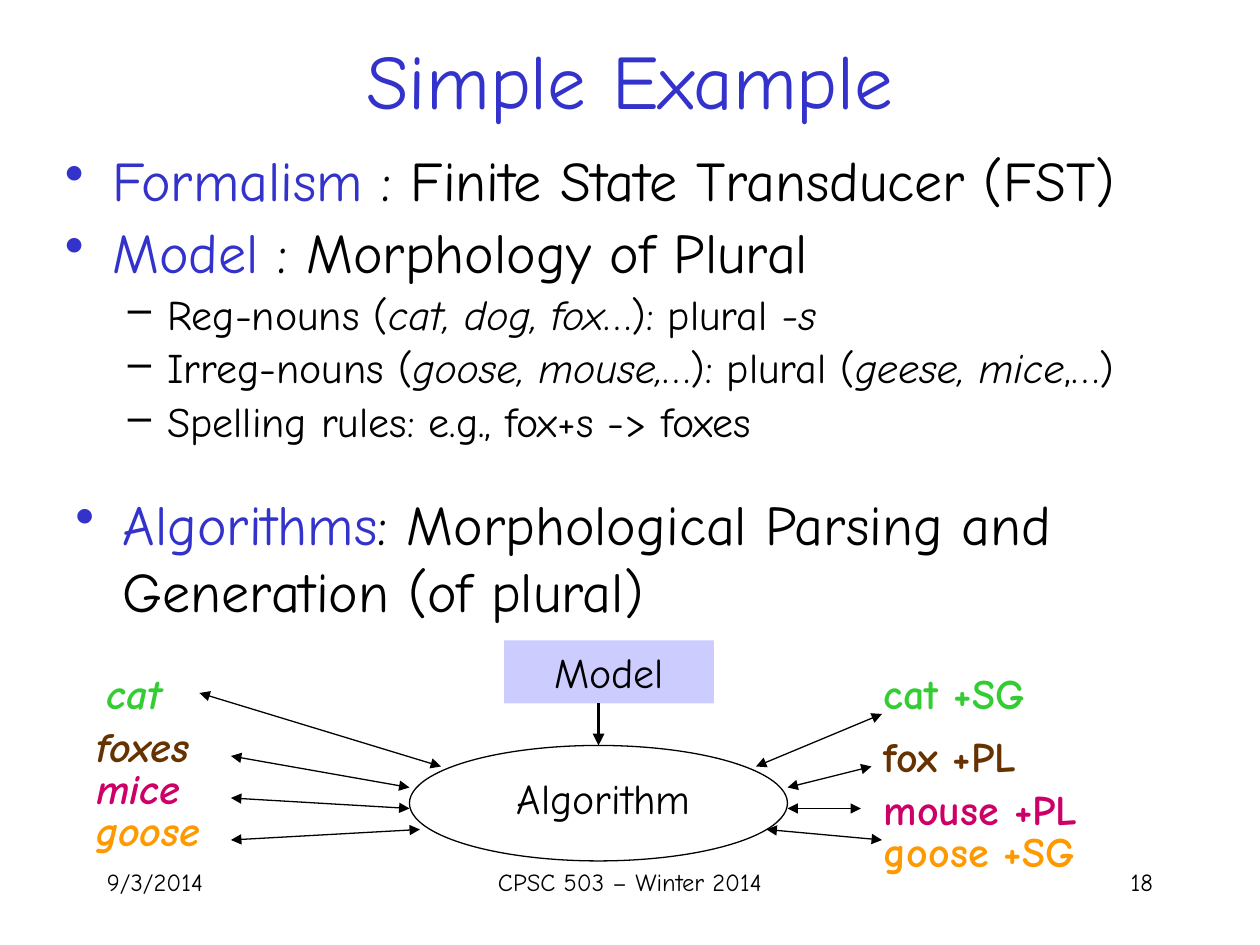
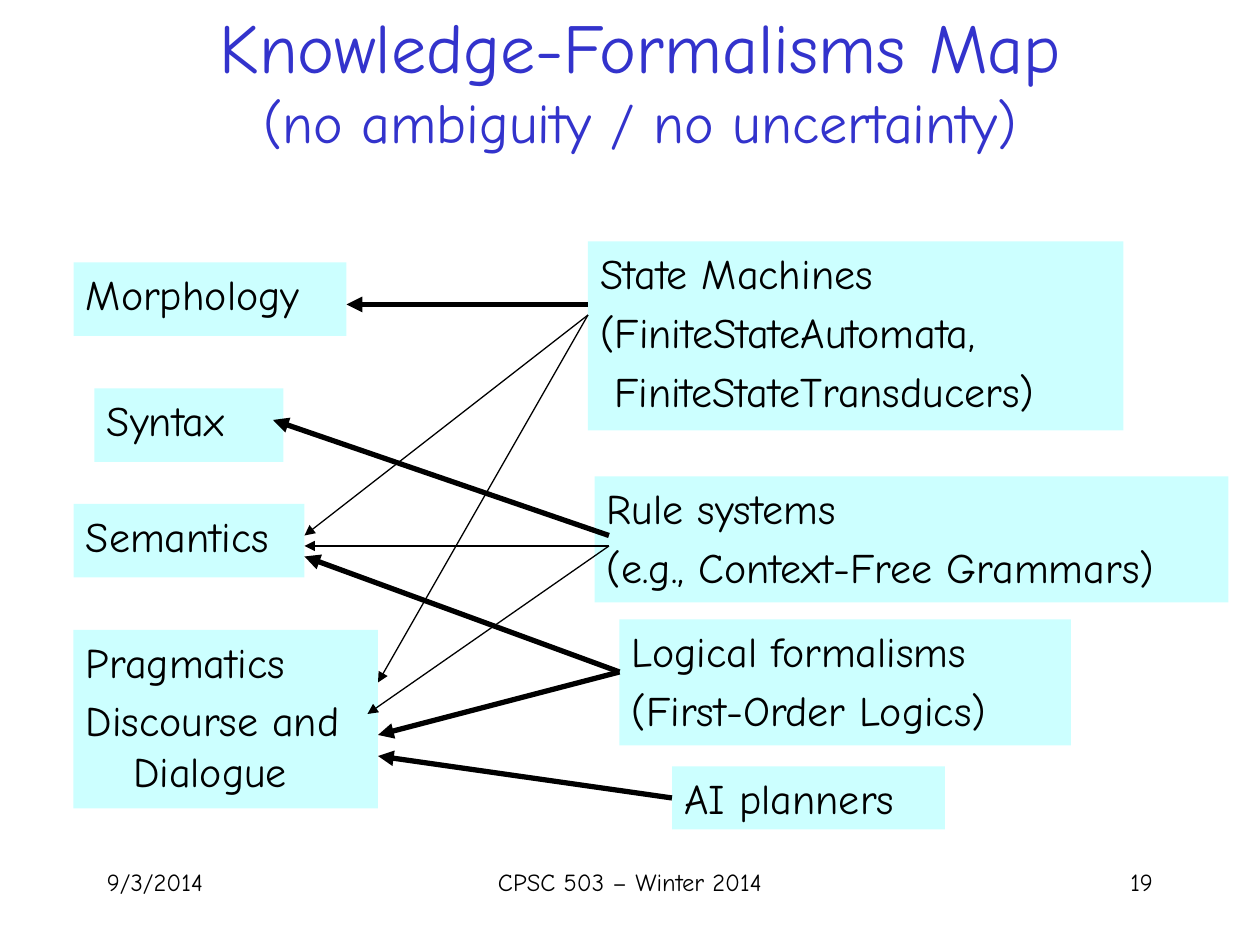
from dataclasses import dataclass
from typing import NamedTuple

from lxml.etree import SubElement
from pptx import Presentation
from pptx.dml.color import RGBColor
from pptx.enum.shapes import MSO_CONNECTOR, MSO_SHAPE
from pptx.enum.text import MSO_ANCHOR, MSO_AUTO_SIZE, PP_ALIGN
from pptx.oxml.ns import qn
from pptx.util import Emu, Pt

PX = 9525  # EMU in one px, 96 px to the inch
TITLE_ONLY = 5


@dataclass(frozen=True)
class Theme:
    font: str = "Comic Neue"
    ink: str = "000000"
    accent: str = "3333CC"
    model: str = "CCCCFF"
    card: str = "CCFFFF"
    green: str = "33CC33"
    brown: str = "663300"
    pink: str = "CC0066"
    orange: str = "FF9900"
    title: int = 44
    long_title: int = 40
    heading: int = 32
    label: int = 24
    footer: int = 14
    thin: float = 0.75
    medium: float = 2.25
    thick: float = 3


THEME = Theme()


class Area(NamedTuple):
    left: int
    top: int
    width: int
    height: int


class Span(NamedTuple):
    text: str
    size: int = THEME.label
    color: str = THEME.ink
    bold: bool = False
    italic: bool = False


class Para(NamedTuple):
    spans: list[Span]
    bullet: str = ""
    margin: int = 36
    hang: int = 36
    before: float = 0.2
    line: float = 1.0
    align: PP_ALIGN = PP_ALIGN.LEFT


class Arrow(NamedTuple):
    start: tuple[int, int]
    end: tuple[int, int]
    weight: float = THEME.thin
    both: bool = False


class Word(NamedTuple):
    text: str
    color: str
    area: Area
    italic: bool = False


class Card(NamedTuple):
    area: Area
    lines: list[str]


def place(area: Area) -> list[Emu]:
    return [Emu(value * PX) for value in area]


def rgb(color: str) -> RGBColor:
    return RGBColor.from_string(color)


def apply(target, formats: dict) -> None:
    for name, value in formats.items():
        setattr(target, name, value)


# Text
def write_span(paragraph, span: Span) -> None:
    run = paragraph.add_run()
    run.text = span.text.rstrip("\n")
    apply(run.font, {"name": THEME.font, "size": Pt(span.size),
                     "bold": span.bold, "italic": span.italic})
    run.font.color.rgb = rgb(span.color)
    if span.text.endswith("\n"):
        paragraph.add_line_break()
        line_break = paragraph._p.findall(qn("a:br"))[-1]
        SubElement(line_break, qn("a:rPr"), sz=str(span.size * 100))


def write(frame, paras: list[Para], anchor=MSO_ANCHOR.TOP) -> None:
    apply(frame, {"word_wrap": True, "auto_size": MSO_AUTO_SIZE.NONE,
                  "vertical_anchor": anchor})
    for index, para in enumerate(paras):
        paragraph = frame.add_paragraph() if index else frame.paragraphs[0]
        apply(paragraph, {"alignment": para.align, "line_spacing": para.line,
                          "space_before": Pt(para.before * para.spans[0].size)})
        properties = paragraph._p.get_or_add_pPr()
        properties.set("marL", str(para.margin * PX))
        properties.set("indent", str(-para.hang * PX))
        if para.bullet:
            SubElement(properties, qn("a:buChar"), char=para.bullet)
        else:
            SubElement(properties, qn("a:buNone"))
        for span in para.spans:
            write_span(paragraph, span)


def plain(spans: list[Span], align=PP_ALIGN.LEFT) -> Para:
    return Para(spans, margin=0, hang=0, before=0, align=align)


def add_text(page, area: Area, paras: list[Para]) -> None:
    write(page.shapes.add_textbox(*place(area)).text_frame, paras)


# Shapes and arrows
def add_panel(page, area: Area, color: str, paras: list[Para]) -> None:
    box = page.shapes.add_shape(MSO_SHAPE.RECTANGLE, *place(area))
    box.shadow.inherit = False
    box.fill.solid()
    box.fill.fore_color.rgb = rgb(color)
    box.line.fill.background()
    write(box.text_frame, paras)


def add_ellipse(page, area: Area) -> None:
    oval = page.shapes.add_shape(MSO_SHAPE.OVAL, *place(area))
    oval.shadow.inherit = False
    oval.fill.background()
    oval.line.color.rgb = rgb(THEME.ink)
    oval.line.width = Pt(THEME.thin)


def add_arrow(page, arrow: Arrow) -> None:
    ends = [Emu(value * PX) for value in (*arrow.start, *arrow.end)]
    line = page.shapes.add_connector(MSO_CONNECTOR.STRAIGHT, *ends)
    line.line.color.rgb = rgb(THEME.ink)
    line.line.width = Pt(arrow.weight)
    outline = line.line._get_or_add_ln()
    for tag in ("a:headEnd", "a:tailEnd") if arrow.both else ("a:tailEnd",):
        SubElement(outline, qn(tag), type="triangle")
    SubElement(line._element.spPr, qn("a:effectLst"))


# Title and footer shared by the slides
def new_page(deck, number: int, title_area: Area, title: list[Span]):
    page = deck.slides.add_slide(deck.slide_layouts[TITLE_ONLY])
    names = ("left", "top", "width", "height")
    apply(page.shapes.title, dict(zip(names, place(title_area))))
    write(page.shapes.title.text_frame, [plain(title, PP_ALIGN.CENTER)],
          MSO_ANCHOR.MIDDLE)
    footers = [
        (72, 200, "9/3/2014", PP_ALIGN.LEFT),
        (328, 304, "CPSC 503 – Winter 2014", PP_ALIGN.CENTER),
        (688, 200, str(number), PP_ALIGN.RIGHT),
    ]
    for left, width, text, align in footers:
        add_text(page, Area(left, 656, width, 48),
                 [plain([Span(text, THEME.footer)], align)])
    return page


def topic(name: str, detail: str, line: float) -> Para:
    return Para([Span(name, THEME.heading, THEME.accent),
                 Span(detail, THEME.heading)], "•", line=line)


def detail(*parts: str) -> Para:
    """Every second part is in italics."""
    spans = [Span(text, italic=index % 2 == 1) for index, text in enumerate(parts)]
    return Para(spans, "–", margin=78, hang=30, line=0.9)


def build_example(deck) -> None:
    page = new_page(deck, 18, Area(72, 0, 816, 120),
                    [Span("Simple Example", THEME.title, THEME.accent)])
    add_text(page, Area(40, 112, 920, 72), [
        topic("Formalism ", ": Finite State Transducer (FST)", 0.9),
        topic("Model ", ": Morphology of Plural", 0.9),
        detail("Reg-nouns (", "cat, dog, fox", "…): plural ", "-s"),
        detail("Irreg-nouns (", "goose, mouse,", "…): plural (", "geese, mice", ",…)"),
        detail("Spelling rules: e.g., fox+s -> foxes"),
    ])
    add_text(page, Area(48, 368, 832, 80), [
        topic("Algorithms", ": Morphological Parsing and Generation (of plural)", 1.0)])

    # Model feeding the algorithm
    add_panel(page, Area(384, 488, 160, 48), THEME.model,
              [Para([Span("Model")], align=PP_ALIGN.CENTER)])
    add_text(page, Area(344, 584, 232, 64),
             [Para([Span("Algorithm")], align=PP_ALIGN.CENTER)])
    add_ellipse(page, Area(312, 568, 288, 88))
    add_arrow(page, Arrow((456, 536), (456, 568), THEME.medium))

    # Surface words on the left, their analyses on the right
    words = [
        Word("cat", THEME.green, Area(72, 504, 128, 64), True),
        Word("foxes", THEME.brown, Area(64, 544, 160, 64), True),
        Word("mice", THEME.pink, Area(64, 576, 128, 48), True),
        Word("goose", THEME.orange, Area(64, 608, 144, 56), True),
        Word("cat +SG", THEME.green, Area(664, 504, 256, 64)),
        Word("fox +PL", THEME.brown, Area(664, 552, 200, 64)),
        Word("mouse +PL", THEME.pink, Area(664, 592, 248, 64)),
        Word("goose +SG", THEME.orange, Area(664, 624, 256, 64)),
    ]
    for word in words:
        span = Span(word.text, color=word.color, bold=True, italic=word.italic)
        add_text(page, word.area, [Para([span])])

    links = [
        ((152, 528), (336, 584)), ((176, 576), (312, 600)),
        ((176, 608), (312, 616)), ((176, 640), (320, 632)),
        ((576, 584), (672, 544)), ((600, 600), (664, 584)),
        ((600, 616), (656, 616)), ((584, 632), (672, 640)),
    ]
    for start, end in links:
        add_arrow(page, Arrow(start, end, both=True))


def build_map(deck) -> None:
    page = new_page(deck, 19, Area(96, 0, 784, 120), [
        Span("Knowledge-Formalisms Map\n", THEME.long_title, THEME.accent),
        Span("(no ambiguity / no uncertainty)", THEME.heading, THEME.accent),
    ])

    # Kinds of knowledge, then formalisms
    cards = [
        Card(Area(56, 200, 208, 56), ["Morphology"]),
        Card(Area(72, 296, 144, 56), ["Syntax"]),
        Card(Area(56, 384, 176, 56), ["Semantics"]),
        Card(Area(56, 480, 232, 136), ["Pragmatics", "Discourse and Dialogue"]),
        Card(Area(448, 184, 408, 144), ["State Machines", "(FiniteStateAutomata,",
                                        " FiniteStateTransducers)"]),
        Card(Area(453, 363, 483, 96), ["Rule systems",
                                       "(e.g., Context-Free Grammars)"]),
        Card(Area(472, 472, 344, 96), ["Logical formalisms",
                                       "(First-Order Logics)"]),
        Card(Area(512, 584, 208, 48), ["AI planners"]),
    ]
    for card in cards:
        add_panel(page, card.area, THEME.card,
                  [Para([Span(line)]) for line in card.lines])

    # Thick arrows mark the main uses
    arrows = [
        Arrow((448, 232), (264, 232), THEME.thick),
        Arrow((464, 408), (208, 320), THEME.thick),
        Arrow((472, 512), (232, 424), THEME.thick),
        Arrow((472, 512), (288, 560), THEME.thick),
        Arrow((512, 608), (288, 576), THEME.thick),
        Arrow((448, 240), (232, 408)),
        Arrow((448, 240), (288, 520)),
        Arrow((464, 416), (232, 416)),
        Arrow((464, 416), (280, 544)),
    ]
    for arrow in arrows:
        add_arrow(page, arrow)


def main() -> None:
    deck = Presentation()
    deck.slide_width, deck.slide_height = Emu(960 * PX), Emu(720 * PX)
    build_example(deck)
    build_map(deck)
    deck.save("out.pptx")


if __name__ == "__main__":
    main()
